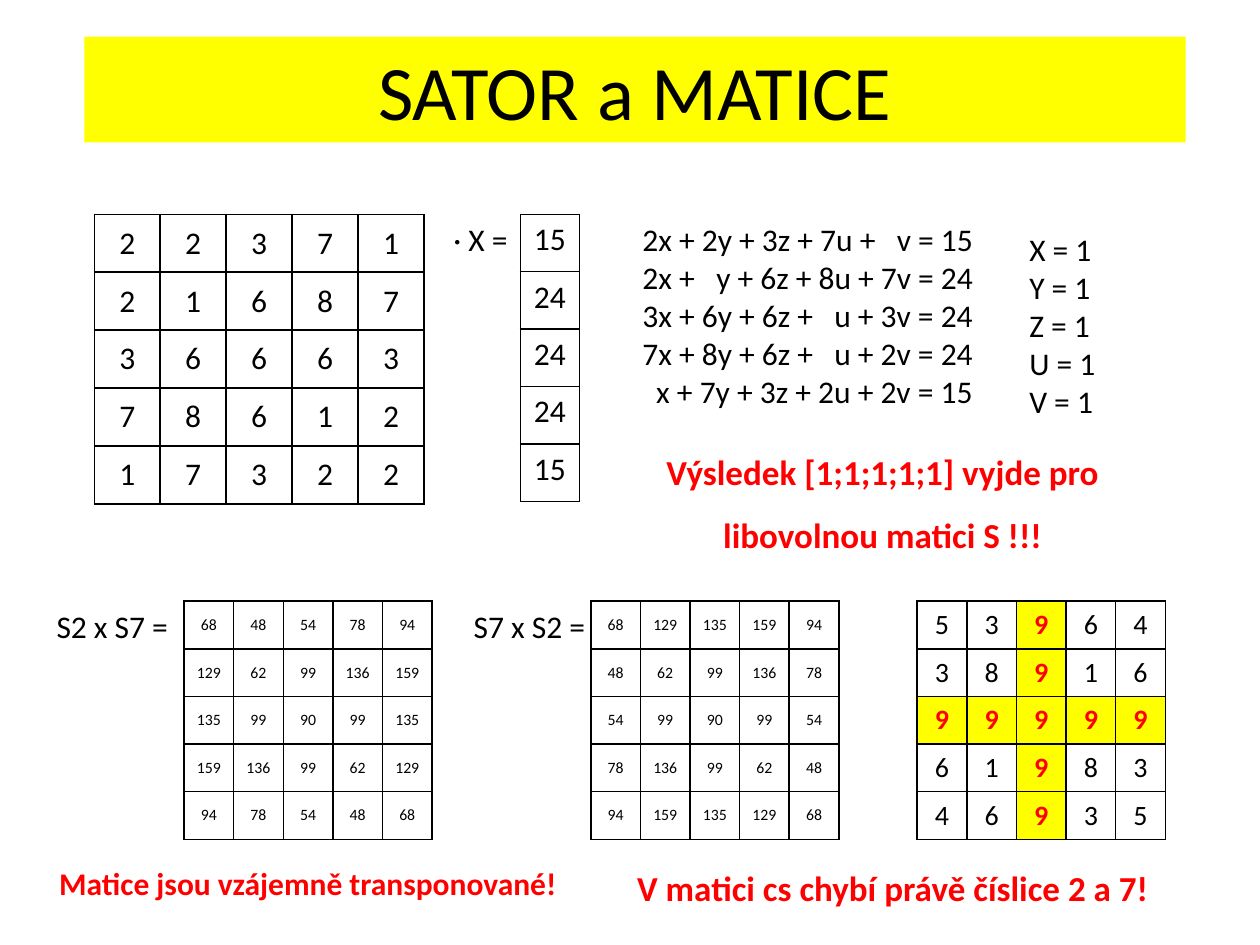
from lxml.etree import SubElement
from pptx import Presentation
from pptx.dml.color import RGBColor
from pptx.enum.text import MSO_ANCHOR, PP_ALIGN
from pptx.oxml.ns import qn
from pptx.util import Cm, Pt

FONT = "Calibri"
BLACK, RED, YELLOW = "000000", "FF0000", "FFFF00"
TOP_ROW, BOTTOM_ROW, NOTE_ROW = 4.32, 12.12, 16.92
MISSING_DIGIT_MARK = 9

HEADING = "SATOR a MATICE"
SATOR = [
    [2, 2, 3, 7, 1],
    [2, 1, 6, 8, 7],
    [3, 6, 6, 6, 3],
    [7, 8, 6, 1, 2],
    [1, 7, 3, 2, 2],
]
RIGHT_SIDE = [[15], [24], [24], [24], [15]]
S2_S7 = [
    [68, 48, 54, 78, 94],
    [129, 62, 99, 136, 159],
    [135, 99, 90, 99, 135],
    [159, 136, 99, 62, 129],
    [94, 78, 54, 48, 68],
]
S7_S2 = list(zip(*S2_S7))
CS = [
    [5, 3, 9, 6, 4],
    [3, 8, 9, 1, 6],
    [9, 9, 9, 9, 9],
    [6, 1, 9, 8, 3],
    [4, 6, 9, 3, 5],
]
EQUATIONS = [
    "2x + 2y + 3z + 7u +\tv = 15",
    "2x +\ty + 6z + 8u + 7v = 24",
    "3x + 6y + 6z +\tu + 3v = 24",
    "7x + 8y + 6z +\tu + 2v = 24",
    "\tx + 7y + 3z + 2u + 2v = 15",
]
UNKNOWN_STOPS = [0.28, 1.49, 3.87, 5.13]
SOLUTION = ["X = 1", "Y = 1", "Z = 1", "U = 1", "V = 1"]

MATRICES = [
    (SATOR, (1.9, TOP_ROW, 6.65, 5.84), 18, MSO_ANCHOR.MIDDLE, None),
    (RIGHT_SIDE, (10.49, TOP_ROW, 1.19, 5.79), 18, MSO_ANCHOR.TOP, None),
    (S2_S7, (3.71, BOTTOM_ROW, 5, 4.8), 9, MSO_ANCHOR.MIDDLE, None),
    (S7_S2, (11.91, BOTTOM_ROW, 5, 4.8), 9, MSO_ANCHOR.MIDDLE, None),
    (CS, (18.49, BOTTOM_ROW, 5, 4.8), 16, MSO_ANCHOR.MIDDLE, MISSING_DIGIT_MARK),
]
LABELS = [
    (["· X ="], (8.89, TOP_ROW, 2.21, 1.02), True),
    (EQUATIONS, (12.7, TOP_ROW, 7.59, 4.11), True),
    (SOLUTION, (20.5, 4.52, 1.85, 4.11), False),
    (["S2 x S7 ="], (0.89, BOTTOM_ROW, 2.79, 1.02), False),
    (["S7 x S2 ="], (9.3, BOTTOM_ROW, 2.79, 1.02), False),
]
CONCLUSIONS = [
    ("Výsledek [1;1;1;1;1] vyjde pro libovolnou matici S !!!", (12.5, 8.53, 10.59, 2.69), 20),
    ("V matici cs chybí právě číslice 2 a 7!", (12.5, NOTE_ROW, 11, 1.55), 20),
    ("Matice jsou vzájemně transponované!", (0.71, NOTE_ROW, 11, 1.3), 18),
]


def paint(fill, color):
    fill.solid()
    fill.fore_color.rgb = RGBColor.from_string(color)


def write(paragraph, text, size, color=BLACK, bold=False, align=PP_ALIGN.LEFT):
    paragraph.alignment = align
    run = paragraph.add_run()
    run.text = text
    run.font.name = FONT
    run.font.size = Pt(size)
    run.font.bold = bold
    run.font.color.rgb = RGBColor.from_string(color)


def add_tab_stops(paragraph, stops):
    tab_list = SubElement(paragraph._p.get_or_add_pPr(), qn("a:tabLst"))
    for stop in stops:
        SubElement(tab_list, qn("a:tab"), pos=str(Cm(stop)), algn="l")


def add_borders(cell):
    properties = cell._tc.get_or_add_tcPr()
    for position, side in enumerate(("lnL", "lnR", "lnT", "lnB")):
        border = SubElement(properties, qn(f"a:{side}"), w=str(Pt(1)))
        SubElement(SubElement(border, qn("a:solidFill")), qn("a:srgbClr"), val=BLACK)
        properties.insert(position, border)


def add_matrix(slide, values, place, size, anchor, marked):
    row_count, column_count = len(values), len(values[0])
    left, top, width, height = place
    matrix = slide.shapes.add_table(row_count, column_count, *map(Cm, place)).table
    matrix.first_row = matrix.horz_banding = False
    for column in matrix.columns:
        column.width = Cm(width / column_count)
    for row, numbers in zip(matrix.rows, values):
        row.height = Cm(height / row_count)
        for cell, number in zip(row.cells, numbers):
            highlighted = number == marked
            cell.vertical_anchor = anchor
            cell.margin_left = cell.margin_right = Cm(0.05)
            if highlighted:
                paint(cell.fill, YELLOW)
            else:
                cell.fill.background()
            add_borders(cell)
            write(cell.text_frame.paragraphs[0], str(number), size,
                  RED if highlighted else BLACK, highlighted, PP_ALIGN.CENTER)


def add_lines(slide, lines, place, wrap, stops=()):
    frame = slide.shapes.add_textbox(*map(Cm, place)).text_frame
    frame.word_wrap = wrap
    for index, line in enumerate(lines):
        paragraph = frame.add_paragraph() if index else frame.paragraphs[0]
        write(paragraph, line, 18)
        if stops:
            add_tab_stops(paragraph, stops)


def add_conclusion(slide, text, place, size):
    frame = slide.shapes.add_textbox(*map(Cm, place)).text_frame
    frame.word_wrap = True
    paragraph = frame.paragraphs[0]
    paragraph.line_spacing = 1.5
    write(paragraph, text, size, RED, True, PP_ALIGN.CENTER)


def main():
    presentation = Presentation()
    presentation.slide_width, presentation.slide_height = Cm(25.4), Cm(19.05)
    slide = presentation.slides.add_slide(presentation.slide_layouts[5])

    heading = slide.shapes.title
    heading.left, heading.top, heading.width, heading.height = map(Cm, (1.7, 0.74, 22.2, 2.13))
    paint(heading.fill, YELLOW)
    heading.text_frame.vertical_anchor = MSO_ANCHOR.MIDDLE
    write(heading.text_frame.paragraphs[0], HEADING, 44, align=PP_ALIGN.CENTER)

    for matrix in MATRICES:
        add_matrix(slide, *matrix)
    for lines, place, wrap in LABELS:
        add_lines(slide, lines, place, wrap, UNKNOWN_STOPS if lines is EQUATIONS else ())
    for conclusion in CONCLUSIONS:
        add_conclusion(slide, *conclusion)

    presentation.save("out.pptx")


if __name__ == "__main__":
    main()
